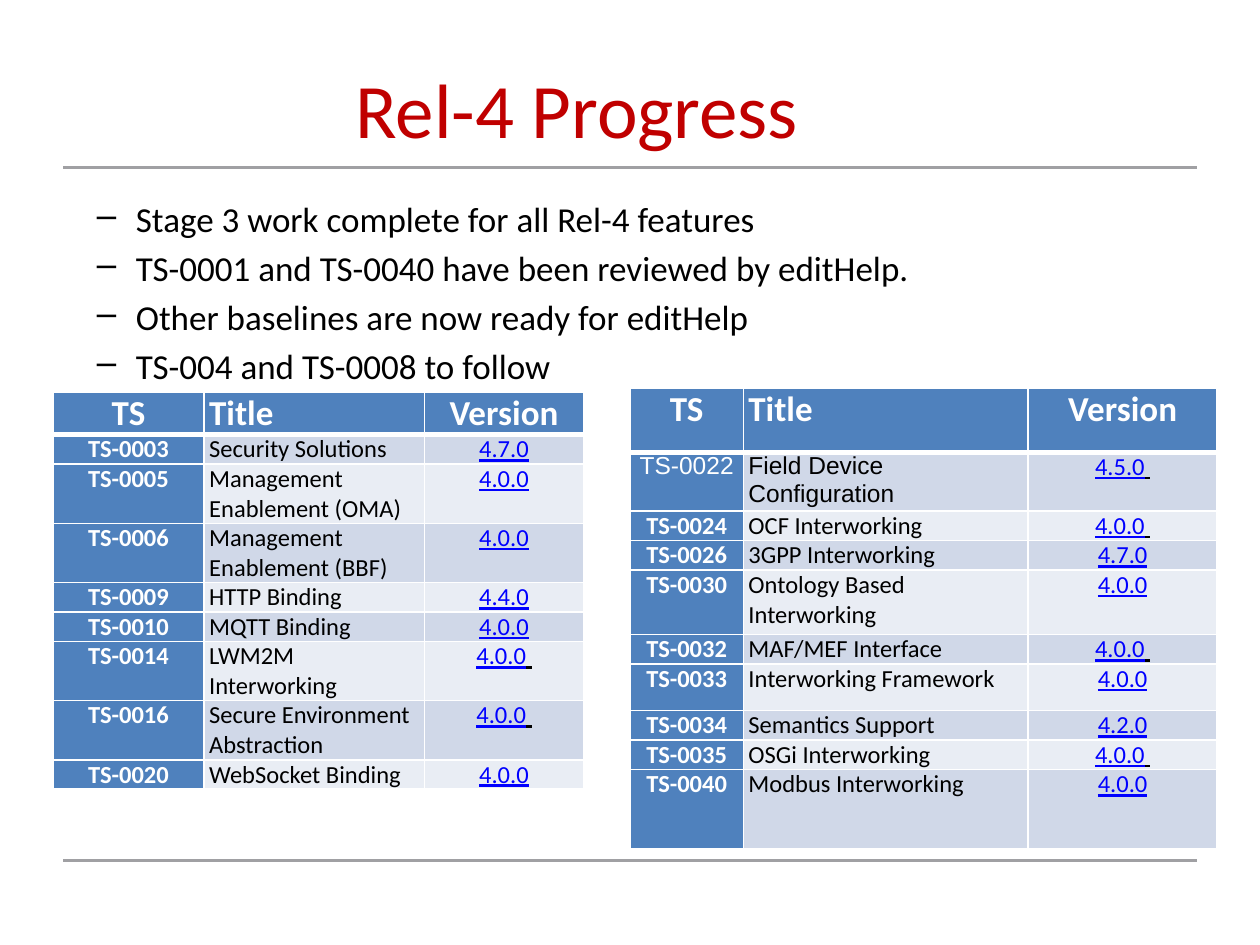
from lxml import etree
from pptx import Presentation
from pptx import util as u
from pptx.dml.color import RGBColor
from pptx.enum import shapes, text
from pptx.oxml.ns import qn

BLUE, WHITE, BLACK, LINK = "4F81BD", "FFFFFF", "000000", "0000FF"
BANDS = ("D0D8E8", "E9EDF4")
ONE_LINE, TWO_LINES = 0.23, 0.47
CENTER, LEFT = text.PP_ALIGN.CENTER, text.PP_ALIGN.LEFT
HEADER = ("TS", "Title", "Version")

POINTS = (
    "Stage 3 work complete for all Rel-4 features",
    "TS-0001 and TS-0040 have been reviewed by editHelp.",
    "Other baselines are now ready for editHelp",
    "TS-004 and TS-0008 to follow",
)

# Each row: specification, title, version, row height
LEFT_SPECS = (
    ("TS-0003", "Security Solutions", "4.7.0", ONE_LINE),
    ("TS-0005", "Management Enablement (OMA)", "4.0.0", TWO_LINES),
    ("TS-0006", "Management Enablement (BBF)", "4.0.0", TWO_LINES),
    ("TS-0009", "HTTP Binding", "4.4.0", ONE_LINE),
    ("TS-0010", "MQTT Binding", "4.0.0", ONE_LINE),
    ("TS-0014", "LWM2M Interworking", "4.0.0 ", TWO_LINES),
    ("TS-0016", "Secure Environment Abstraction", "4.0.0 ", TWO_LINES),
    ("TS-0020", "WebSocket Binding", "4.0.0", ONE_LINE),
)
RIGHT_SPECS = (
    ("TS-0022", "Field Device Configuration", "4.5.0 ", 0.43),
    ("TS-0024", "OCF Interworking", "4.0.0 ", ONE_LINE),
    ("TS-0026", "3GPP Interworking", "4.7.0", ONE_LINE),
    ("TS-0030", "Ontology Based Interworking", "4.0.0", 0.51),
    ("TS-0032", "MAF/MEF Interface", "4.0.0 ", ONE_LINE),
    ("TS-0033", "Interworking Framework", "4.0.0", 0.37),
    ("TS-0034", "Semantics Support", "4.2.0", ONE_LINE),
    ("TS-0035", "OSGi Interworking", "4.0.0 ", ONE_LINE),
    ("TS-0040", "Modbus Interworking", "4.0.0", 0.63),
)
ARIAL_SPECS = {"TS-0022"}


def color(hex_string):
    return RGBColor.from_string(hex_string)


def add_run(paragraph, words, size, ink, **extra):
    run = paragraph.add_run()
    run.text = words
    font_format = {"name": "Calibri", "size": u.Pt(size), **extra}
    for attribute, value in font_format.items():
        setattr(run.font, attribute, value)
    run.font.color.rgb = color(ink)


def add_rule(slide, y):
    rule = slide.shapes.add_connector(
        shapes.MSO_CONNECTOR.STRAIGHT,
        u.Inches(0.5), u.Inches(y), u.Inches(9.5), u.Inches(y))
    rule.line.color.rgb = color("A0A0A3")
    rule.line.width = u.Pt(1.75)
    etree.SubElement(rule._element.spPr, qn("a:effectLst"))


def add_text_frame(slide, *place):
    frame = slide.shapes.add_textbox(*map(u.Inches, place)).text_frame
    frame.word_wrap = True
    return frame


def add_title(slide, words):
    paragraph = add_text_frame(slide, 0.08, 0.44, 9, 1.25).paragraphs[0]
    paragraph.alignment = CENTER
    add_run(paragraph, words, 44, "C00000")


def add_points(slide, points):
    frame = add_text_frame(slide, 0.17, 1.52, 9.54, 5.4)
    for index, point in enumerate(points):
        paragraph = frame.add_paragraph() if index else frame.paragraphs[0]
        properties = paragraph._p.get_or_add_pPr()
        properties.set("marL", str(u.Inches(0.81)))
        properties.set("indent", str(u.Inches(-0.31)))
        etree.SubElement(properties, qn("a:buChar"), char="–")
        if index:
            paragraph.space_before = u.Pt(4)
        add_run(paragraph, point, 20, BLACK)


def set_borders(cell, **widths):
    """Draw white cell edges, 1 point wide unless a side is given a width."""
    properties = cell._tc.get_or_add_tcPr()
    for index, side in enumerate(("lnL", "lnR", "lnT", "lnB")):
        edge = etree.Element(qn(f"a:{side}"), w=str(u.Pt(widths.get(side, 1))))
        fill = etree.SubElement(edge, qn("a:solidFill"))
        etree.SubElement(fill, qn("a:srgbClr"), val=WHITE)
        properties.insert(index, edge)


def style_cell(cell, fill, alignment, **widths):
    """Format the cell and return its paragraph, ready for runs."""
    inset = u.Inches(0.04)
    cell_format = {"margin_left": inset, "margin_right": inset,
                   "margin_top": 0, "margin_bottom": 0,
                   "vertical_anchor": text.MSO_ANCHOR.TOP}
    for attribute, value in cell_format.items():
        setattr(cell, attribute, value)
    cell.fill.solid()
    cell.fill.fore_color.rgb = color(fill)
    set_borders(cell, **widths)
    paragraph = cell.text_frame.paragraphs[0]
    paragraph.alignment = alignment
    return paragraph


def add_spec_row(table, row, spec, title, version):
    band = BANDS[(row - 1) % 2]
    top = {"lnT": 3} if row == 1 else {}
    arial = spec in ARIAL_SPECS
    face = "Arial" if arial else "Calibri"

    label = style_cell(table.cell(row, 0), BLUE, CENTER, **top)
    add_run(label, spec, 14, WHITE, name=face, bold=not arial)
    name = style_cell(table.cell(row, 1), band, LEFT, **top)
    add_run(name, title, 14, BLACK, name=face, bold=False)
    release = style_cell(table.cell(row, 2), band, CENTER, **top)
    number = version.rstrip()
    add_run(release, number, 14, LINK, bold=False, underline=True)
    if number != version:
        add_run(release, " ", 14, BLACK, bold=False, underline=True)


def add_spec_table(slide, left, top, widths, header_height, specs):
    heights = [header_height] + [height for *_, height in specs]
    table = slide.shapes.add_table(
        len(heights), len(widths), u.Inches(left), u.Inches(top),
        u.Inches(sum(widths)), u.Inches(sum(heights))).table
    for column, width in zip(table.columns, widths):
        column.width = u.Inches(width)
    for row, height in zip(table.rows, heights):
        row.height = u.Inches(height)

    for column, heading in enumerate(HEADER):
        alignment = LEFT if heading == "Title" else CENTER
        paragraph = style_cell(table.cell(0, column), BLUE, alignment, lnB=3)
        add_run(paragraph, heading, 20, WHITE, bold=True)
    for row, (*content, _) in enumerate(specs, start=1):
        add_spec_row(table, row, *content)


def main():
    deck = Presentation()
    deck.slide_width, deck.slide_height = u.Inches(10), u.Inches(7.5)
    slide = deck.slides.add_slide(deck.slide_layouts[6])
    for y in (6.83, 1.33):
        add_rule(slide, y)
    add_title(slide, "Rel-4 Progress")
    add_points(slide, POINTS)
    add_spec_table(slide, 0.42, 3.11, (1.2, 1.75, 1.26), 0.34, LEFT_SPECS)
    add_spec_table(slide, 5, 3.08, (0.9, 2.26, 1.5), 0.51, RIGHT_SPECS)
    deck.save("out.pptx")


if __name__ == "__main__":
    main()
